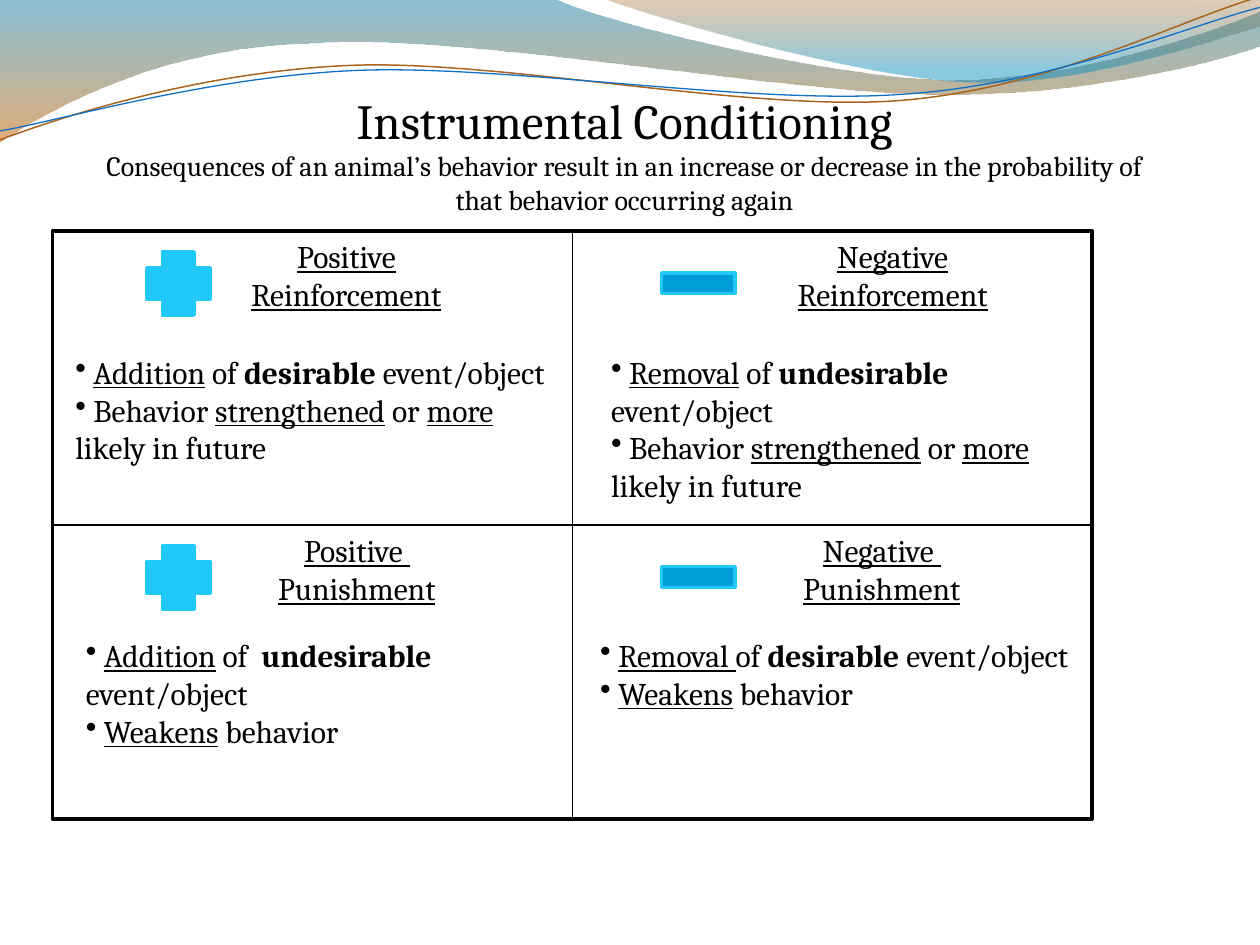
from lxml import etree
from pptx import Presentation
from pptx.dml.color import RGBColor
from pptx.enum import shapes, text
from pptx.oxml import ns
from pptx.util import Cm, Pt

BLACK = RGBColor(0x00, 0x00, 0x00)
WHITE = RGBColor(0xFF, 0xFF, 0xFF)
SKY = RGBColor(0x20, 0xC9, 0xF8)
AZURE = RGBColor(0x00, 0x9D, 0xD9)
TEAL = RGBColor(0x00, 0x74, 0xA1)
ORANGE = RGBColor(0xCD, 0x67, 0x00)
BROWN = RGBColor(0x9F, 0x54, 0x09)
OCEAN = RGBColor(0x00, 0x8B, 0xBF)
COPPER = RGBColor(0xA9, 0x64, 0x1F)
BLUE = RGBColor(0x0F, 0x6F, 0xC6)
FONT = "Cambria"

# Outlines in cm: two numbers are a straight step, six a Bezier step.
# Gradient stops: position, colour, opacity in percent.
WAVES = [
    ([(0, 0), (11.18, -0.03), (12.09, 0.43, 16.87, 1.6, 19.25, 1.6),
      (21.67, 1.6, 24.33, 0.66, 25.4, 0.23), (25.43, 0.91),
      (24.97, 1.12, 22.1, 1.93, 18.95, 1.9), (15.8, 1.9, 9.7, 0.71, 6.53, 0.86),
      (3.28, 0.91, 1.17, 2.11, -0.03, 2.87)],
     [(0, TEAL, 45), (1, ORANGE, 55)]),
    ([(12.17, -0.03), (12.93, 0.28, 17.32, 1.57, 19.53, 1.65),
      (21.74, 1.75, 24.41, 0.81, 25.4, 0.53), (25.4, 0)],
     [(0, BROWN, 30), (0.8, OCEAN, 45)]),
]
RIBBONS = [
    ([(0, 2.82), (1.22, 2.36, 4.01, 1.45, 7.04, 1.32),
      (10.03, 1.19, 15.06, 2.26, 18.11, 2.03), (21.16, 1.8, 23.83, 0.38, 25.35, -0.05)],
     COPPER, 0.85),
    ([(0, 2.64), (1.19, 2.44, 4.17, 1.55, 7.19, 1.42),
      (10.24, 1.3, 15.16, 2.13, 18.21, 1.9), (21.23, 1.7, 23.9, 0.53, 25.4, 0.15)],
     BLUE, 0.75),
]

TITLE = [
    ("Instrumental Conditioning", 28),
    ("Consequences of an animal’s behavior result in an increase or decrease "
     "in the probability of that behavior occurring again", 16),
]
# Paragraphs are lists of (text, style): u underlined, b bold
STRONGER = [(" Behavior ", ""), ("strengthened", "u"), (" or ", ""),
            ("more ", "u"), ("likely in future", "")]
WEAKER = [(" ", ""), ("Weakens", "u"), (" behavior", "")]
# Row by row: heading left, heading lines, body left, body width, body
QUADRANTS = [
    [(3.81, ["Positive Reinforcement"], 1.27, 10.16,
      [[(" ", ""), ("Addition", "u"), (" of ", ""), ("desirable", "b"),
        (" event/object", "")], STRONGER]),
     (14.82, ["Negative Reinforcement"], 12.07, 9.53,
      [[(" ", ""), ("Removal", "u"), (" of ", ""), ("undesirable ", "b"),
        ("event/object", "")], STRONGER])],
    [(4.02, ["Positive ", "Punishment"], 1.48, 9.74,
      [[(" ", ""), ("Addition", "u"), (" of  ", ""), ("undesirable", "b"),
        (" event/object", "")], WEAKER]),
     (14.6, ["Negative ", "Punishment"], 11.85, 9.95,
      [[(" ", ""), ("Removal ", "u"), ("of ", ""), ("desirable ", "b"),
        ("event/object", "")], WEAKER])],
]
GRID_LEFT, GRID_TOP, GRID_W, GRID_H = 1.06, 4.66, 20.96, 11.85
BODY_TOPS, BODY_HEIGHTS = (6.99, 12.7), (3.33, 2.57)
# Signs by column: preset, left, offset from row top, width, height, fill
SIGNS = [
    (shapes.MSO_SHAPE.CROSS, 2.96, 0.42, 1.27, 1.27, SKY),
    (shapes.MSO_SHAPE.RECTANGLE, 13.34, 0.84, 1.48, 0.42, AZURE),
]


def add_outline(s, steps, close):
    """Draw the steps as a freeform, joining each Bezier step's three points."""
    start, *rest = [[(Cm(x), Cm(y)) for x, y in zip(step[::2], step[1::2])]
                    for step in steps]
    builder = s.shapes.build_freeform(*start[0])
    builder.add_line_segments([point for step in rest for point in step], close=close)
    sp = builder.convert_to_shape()
    sp.shadow.inherit = False
    lines = iter(sp._element.xpath(".//a:path/a:lnTo"))
    for step in rest:
        segment = [next(lines) for _ in step]
        if len(segment) == 3:
            curve = etree.Element(ns.qn("a:cubicBezTo"))
            segment[0].addprevious(curve)
            for line in segment:
                curve.append(line[0])
                line.getparent().remove(line)
    return sp


def add_wave(s, steps, stops):
    sp = add_outline(s, steps, True)
    sp.line.fill.background()
    sp.fill.gradient()
    sp.fill.gradient_angle = 270
    for stop, (position, color, _) in zip(sp.fill.gradient_stops, stops):
        stop.position = position
        stop.color.rgb = color
    for clr, (_, _, opacity) in zip(sp._element.xpath(".//a:gs/a:srgbClr"), stops):
        etree.SubElement(clr, ns.qn("a:alpha")).set("val", str(opacity * 1000))


def add_ribbon(s, steps, color, width):
    sp = add_outline(s, steps, False)
    sp.fill.background()
    sp.line.color.rgb = color
    sp.line.width = Pt(width)


def add_box(s, kind, left, top, width, height, fill, line):
    sp = s.shapes.add_shape(kind, Cm(left), Cm(top), Cm(width), Cm(height))
    sp.shadow.inherit = False
    sp.fill.solid()
    sp.fill.fore_color.rgb = fill
    sp.line.color.rgb = line
    sp.line.width = Pt(2)


def add_rule(s, x1, y1, x2, y2):
    rule = s.shapes.add_connector(shapes.MSO_CONNECTOR.STRAIGHT,
                                  Cm(x1), Cm(y1), Cm(x2), Cm(y2))
    rule.line.color.rgb = BLACK
    rule.line.width = Pt(0.75)
    etree.SubElement(rule._element.spPr, ns.qn("a:effectLst"))


def style_run(r, size, style=""):
    r.font.name = FONT
    r.font.size = Pt(size)
    r.font.color.rgb = BLACK
    r.font.underline = "u" in style
    r.font.bold = "b" in style


def add_text(s, left, top, width, height, paragraphs, bulleted):
    tf = s.shapes.add_textbox(Cm(left), Cm(top), Cm(width), Cm(height)).text_frame
    tf.word_wrap = True
    tf.auto_size = text.MSO_AUTO_SIZE.SHAPE_TO_FIT_TEXT
    for i, runs in enumerate(paragraphs):
        p = tf.add_paragraph() if i else tf.paragraphs[0]
        p.alignment = text.PP_ALIGN.LEFT if bulleted else text.PP_ALIGN.CENTER
        if bulleted:
            props = p._p.get_or_add_pPr()
            etree.SubElement(props, ns.qn("a:buFontTx"))
            etree.SubElement(props, ns.qn("a:buChar")).set("char", "•")
        for words, style in runs:
            r = p.add_run()
            r.text = words
            style_run(r, 18, style)


def set_title(s):
    title = s.shapes.title
    title.left, title.top, title.width, title.height = Cm(1.69), Cm(1.69), Cm(21.8), Cm(4.01)
    tf = title.text_frame
    tf.text = "\n".join(words for words, _ in TITLE)
    tf.word_wrap = True
    tf.auto_size = text.MSO_AUTO_SIZE.NONE
    tf.vertical_anchor = text.MSO_ANCHOR.TOP
    for p, (_, size) in zip(tf.paragraphs, TITLE):
        p.alignment = text.PP_ALIGN.CENTER
        style_run(p.runs[0], size)


def main():
    prs = Presentation()
    prs.slide_width, prs.slide_height = Cm(25.4), Cm(19.05)
    s = prs.slides.add_slide(prs.slide_layouts[5])
    for wave in WAVES:
        add_wave(s, *wave)
    for ribbon in RIBBONS:
        add_ribbon(s, *ribbon)
    set_title(s)

    add_box(s, shapes.MSO_SHAPE.RECTANGLE, GRID_LEFT, GRID_TOP, GRID_W, GRID_H, WHITE, BLACK)
    mid_x, mid_y = GRID_LEFT + GRID_W / 2, GRID_TOP + GRID_H / 2
    add_rule(s, GRID_LEFT, mid_y, GRID_LEFT + GRID_W, mid_y)
    add_rule(s, mid_x, GRID_TOP, mid_x, GRID_TOP + GRID_H)

    for row_top, body_top, body_h, row in zip((GRID_TOP, mid_y), BODY_TOPS,
                                              BODY_HEIGHTS, QUADRANTS):
        for quadrant, sign in zip(row, SIGNS):
            head_left, heading, body_left, body_w, body = quadrant
            kind, left, offset, width, height, fill = sign
            add_box(s, kind, left, row_top + offset, width, height, fill, SKY)
            add_text(s, head_left, row_top, 6.35, 1.8,
                     [[(line, "u")] for line in heading], False)
            add_text(s, body_left, body_top, body_w, body_h, body, True)
    prs.save("out.pptx")


if __name__ == "__main__":
    main()
